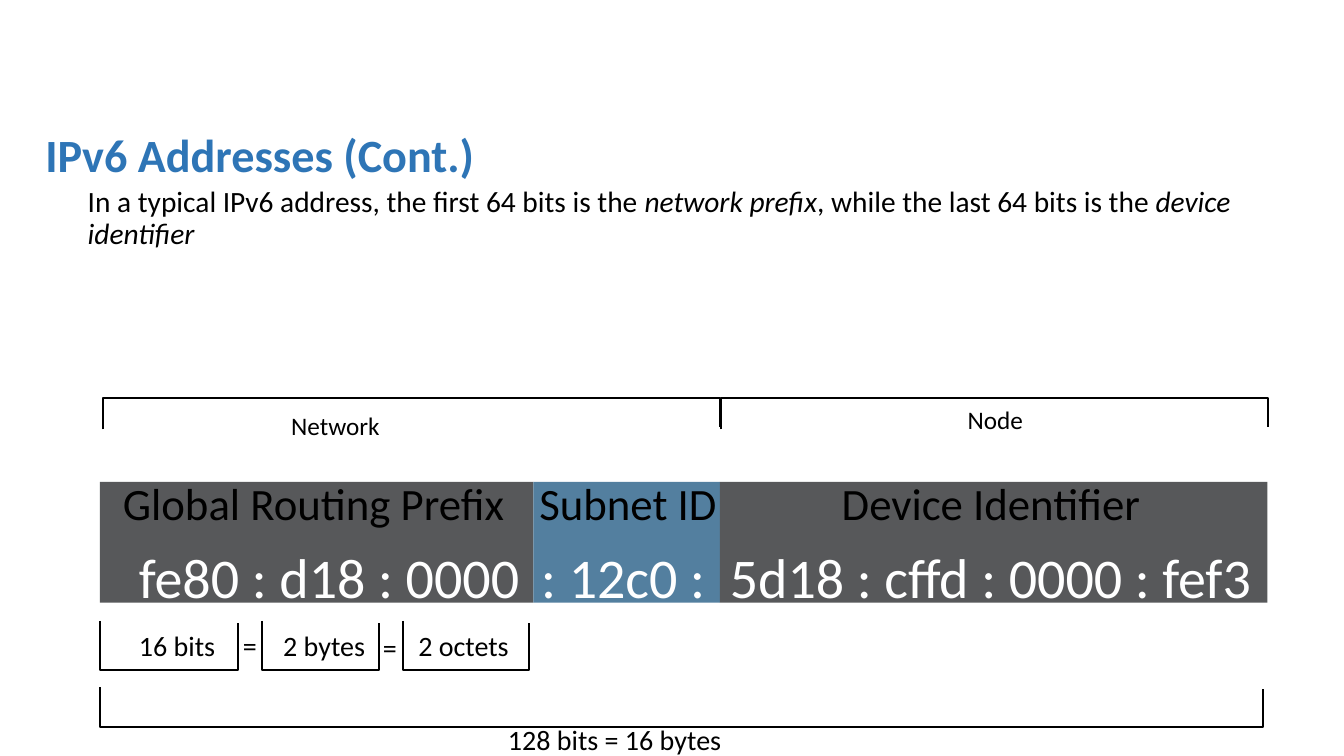
from pptx import Presentation
from pptx.dml.color import RGBColor
from pptx.enum.shapes import MSO_SHAPE
from pptx.enum.text import MSO_ANCHOR, MSO_AUTO_SIZE, PP_ALIGN
from pptx.oxml.xmlchemy import OxmlElement
from pptx.util import Inches, Pt

COLOURS = {"title": "2E75B6", "ink": "000000", "light": "FFFFFF",
           "dark_band": "57585A", "subnet": "537F9F"}
FONT = "Calibri"
LEFT = 0.99


def colour(name):
    return RGBColor.from_string(COLOURS[name])


def add_span(para, text, size, ink="ink", **style):
    span = para.add_run()
    span.text = text
    for name, value in {"name": FONT, "size": Pt(size), **style}.items():
        setattr(span.font, name, value)
    span.font.color.rgb = colour(ink)


def add_label(page, text, box, size, ink="ink"):
    label = page.shapes.add_textbox(*map(Inches, box))
    label.text_frame.word_wrap = False
    label.text_frame.auto_size = MSO_AUTO_SIZE.SHAPE_TO_FIT_TEXT
    add_span(label.text_frame.paragraphs[0], text, size, ink)


def add_bracket(page, left, width, spine, first_end, last_end):
    """Three-sided bracket: a horizontal spine with a leg at each end."""
    right = left + width
    corners = [(left, first_end), (left, spine),
               (right, spine), (right, last_end)]
    start, *others = [(Inches(x), Inches(y)) for x, y in corners]
    builder = page.shapes.build_freeform(*start)
    builder.add_line_segments(others, close=False)
    bracket = builder.convert_to_shape()
    bracket.shadow.inherit = False
    bracket.fill.background()
    bracket.line.color.rgb = colour("ink")
    bracket.line.width = Pt(1.5)


def fill_placeholder(holder, box, anchor, spans, space_before=0):
    for name, value in zip(("left", "top", "width", "height"), box):
        setattr(holder, name, Inches(value))
    frame = holder.text_frame
    frame.word_wrap = True
    frame.auto_size = MSO_AUTO_SIZE.NONE
    frame.vertical_anchor = anchor
    para = frame.paragraphs[0]
    para_format = {"alignment": PP_ALIGN.LEFT, "line_spacing": 0.9,
                   "space_before": Pt(space_before)}
    for name, value in para_format.items():
        setattr(para, name, value)
    for text, size, ink, style in spans:
        add_span(para, text, size, ink, **style)
    return para


def add_heading(page):
    fill_placeholder(
        page.shapes.title, (0.35, 1.07, 12.68, 0.99), MSO_ANCHOR.MIDDLE,
        [("IPv6 Addresses (Cont.)", 33, "title", {"bold": True})])
    parts = ["In a typical IPv6 address, the first 64 bits is the ",
             "network prefix", ", while the last 64 bits is the ",
             "device identifier"]
    spans = [(text, 21, "ink", {"italic": index % 2 == 1})
             for index, text in enumerate(parts)]
    para = fill_placeholder(page.placeholders[1], (0.77, 1.81, 11.76, 1.15),
                            MSO_ANCHOR.TOP, spans, 7.5)
    # Plain paragraph: no bullet, no hanging indent
    properties = para._p.get_or_add_pPr()
    properties.set("marL", "0")
    properties.set("indent", "0")
    properties.append(OxmlElement("a:buNone"))


def add_address_band(page, left, top, height):
    # width, fill, name and its offset and width, digits and their offset and width
    fields = [
        (4.3, "dark_band", "Global Routing Prefix", 0.13, 4.03,
         "fe80 : d18 : 0000", 0.29, 4.01),
        (1.85, "subnet", "Subnet ID", -0.04, 1.98, ": 12c0 :", -0.02, 1.97),
        (5.43, "dark_band", "Device Identifier", 1.11, 3.2,
         "5d18 : cffd : 0000 : fef3", 0, 5.44),
    ]
    for (width, fill, name, name_shift, name_width,
         digits, digits_shift, digits_width) in fields:
        field = page.shapes.add_shape(
            MSO_SHAPE.RECTANGLE, *map(Inches, (left, top, width, height)))
        field.shadow.inherit = False
        field.fill.solid()
        field.fill.fore_color.rgb = colour(fill)
        field.line.fill.background()
        add_label(page, name,
                  (left + name_shift, top - 0.11, name_width, 0.64), 32)
        add_label(page, digits, (left + digits_shift, top + 0.55,
                                 digits_width, 0.77), 40, "light")
        left += width


def add_halves(page, top):
    halves = [(1.02, 6.12, "Network", 2.79, 0.07, 1.09),
              (7.15, 5.43, "Node", 9.5, 0.01, 0.76)]
    for left, width, name, name_left, drop, name_width in halves:
        add_bracket(page, left, width, top, top + 0.31, top + 0.29)
        add_label(page, name, (name_left, top + drop, name_width, 0.4), 18)


def add_group_sizes(page, top):
    sizes = [(LEFT, 1.37, "16 bits", 1.28, 0.97),
             (2.6, 1.16, "2 bytes", 2.71, 1.02),
             (4, 1.25, "2 octets", 4.05, 1.11)]
    for left, width, text, text_left, text_width in sizes:
        add_bracket(page, left, width, top + 0.49, top, top + 0.02)
        add_label(page, text, (text_left, top + 0.03, text_width, 0.44), 20)
    for left, drop in ((2.31, 0.03), (3.7, 0.05)):
        add_label(page, "=", (left, top + drop, 0.34, 0.44), 20)


def add_total(page, top):
    add_bracket(page, LEFT, 11.54, top + 0.39, top, top + 0.02)
    add_label(page, "128 bits = 16 bytes", (4.94, top + 0.3, 2.34, 0.44), 20)


def main():
    deck = Presentation()
    deck.slide_width, deck.slide_height = Inches(13.33), Inches(7.5)
    page = deck.slides.add_slide(deck.slide_layouts[1])
    add_heading(page)
    add_address_band(page, LEFT, 4.78, 1.2)
    add_halves(page, 3.95)
    add_group_sizes(page, 6.16)
    add_total(page, 6.82)
    deck.save("out.pptx")


if __name__ == "__main__":
    main()
